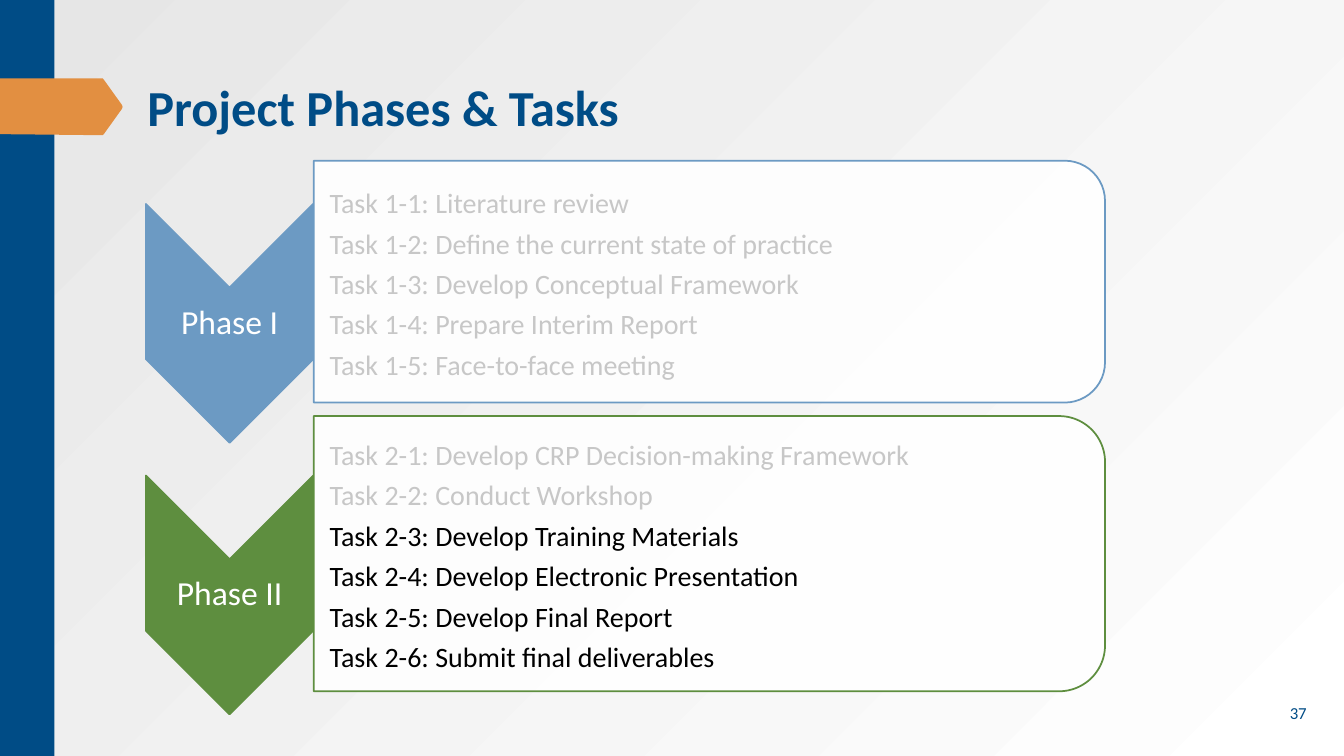
from lxml.etree import SubElement
from pptx import Presentation
from pptx.dml.color import RGBColor
from pptx.enum.shapes import MSO_SHAPE
from pptx.enum.text import MSO_ANCHOR, MSO_AUTO_SIZE, PP_ALIGN
from pptx.oxml.ns import qn
from pptx.util import Pt

NAVY, ORANGE, WHITE, BLACK = "004C86", "E28F41", "FFFFFF", "000000"
BLUE, GREEN, MUTED, SHADE = "6C9AC3", "5E8E3F", "C7C7C7", "E6E6E6"

TAB_OUTLINE = [(0, 56), (73.4, 56), (74.2, 56.9), (87.1, 74.9), (87.6, 76.3),
               (87.1, 77.8), (74.2, 95.8), (73.4, 96.5), (68.4, 96.5), (0, 95.8)]

PHASES = [
    {"name": "Phase I", "color": BLUE, "chevron_y": 231, "card_y": 201.2,
     "card_height": 172.8, "muted": 5, "tasks": [
         "Task 1-1: Literature review",
         "Task 1-2: Define the current state of practice",
         "Task 1-3: Develop Conceptual Framework",
         "Task 1-4: Prepare Interim Report",
         "Task 1-5: Face-to-face meeting"]},
    {"name": "Phase II", "color": GREEN, "chevron_y": 425, "card_y": 395.5,
     "card_height": 196.6, "muted": 2, "tasks": [
         "Task 2-1: Develop CRP Decision-making Framework",
         "Task 2-2: Conduct Workshop",
         "Task 2-3: Develop Training Materials",
         "Task 2-4: Develop Electronic Presentation",
         "Task 2-5: Develop Final Report",
         "Task 2-6: Submit final deliverables"]},
]


def rgb(color):
    """Turn a hex string into a colour."""
    return RGBColor.from_string(color)


class Painter:
    """Draws styled elements on the current slide."""

    font = "Calibri"

    def __init__(self, page):
        """Remember the slide to draw on."""
        self.page = page

    def background(self, center, edge):
        """Fill the slide with a gradient spreading from the bottom right corner."""
        fill = self.page.background.fill
        fill.gradient()
        for stop, color in zip(fill.gradient_stops, (center, edge)):
            stop.color.rgb = rgb(color)
        gradient = next(self.page.element.iter(qn("a:gradFill")))
        gradient.remove(gradient.find(qn("a:lin")))
        path = SubElement(gradient, qn("a:path"), path="circle")
        SubElement(path, qn("a:fillToRect"), l="100000", t="100000")

    def paint(self, shape, fill, line=None):
        """Set the fill and outline of a shape and drop its shadow."""
        shape.shadow.inherit = False
        shape.fill.solid()
        shape.fill.fore_color.rgb = rgb(fill)
        if line:
            shape.line.color.rgb = rgb(line)
            shape.line.width = Pt(1.25)
        else:
            shape.line.fill.background()

    def band(self, left, top, width, height, color):
        """Draw a plain rectangle."""
        shape = self.page.shapes.add_shape(
            MSO_SHAPE.RECTANGLE, Pt(left), Pt(top), Pt(width), Pt(height))
        self.paint(shape, color)

    def outline(self, points, color):
        """Draw a filled polygon."""
        corners = [(Pt(x), Pt(y)) for x, y in points]
        builder = self.page.shapes.build_freeform(*corners[0])
        builder.add_line_segments(corners[1:])
        self.paint(builder.convert_to_shape(), color)

    def turned(self, kind, center_x, center_y, width, height, fill, line, opacity=100):
        """Draw a preset shape turned a quarter, sized as it shows."""
        shape = self.page.shapes.add_shape(
            kind, Pt(center_x - height / 2), Pt(center_y - width / 2),
            Pt(height), Pt(width))
        shape.rotation = 90
        self.paint(shape, fill, line)
        if opacity < 100:
            color = shape.fill._xPr.find(qn("a:solidFill"))[0]
            SubElement(color, qn("a:alpha"), val=str(opacity * 1000))

    def format_para(self, para, size, color, align, bold=False):
        """Style one paragraph and its runs."""
        para.alignment = align
        for span in para.runs:
            span.font.name = self.font
            span.font.size = Pt(size)
            span.font.bold = bold
            span.font.color.rgb = rgb(color)

    def place(self, box, left, top, width, height, anchor, insets):
        """Position a text holder and set up its frame."""
        box.left, box.top, box.width, box.height = map(Pt, (left, top, width, height))
        frame = box.text_frame
        frame.word_wrap = True
        frame.auto_size = MSO_AUTO_SIZE.NONE
        frame.vertical_anchor = anchor
        (frame.margin_left, frame.margin_top,
         frame.margin_right, frame.margin_bottom) = map(Pt, insets)
        return frame

    def title(self, text, left, top, width, height):
        """Fill the title placeholder."""
        frame = self.place(self.page.shapes.title, left, top, width, height,
                           MSO_ANCHOR.TOP, (7.2, 3.6, 7.2, 3.6))
        frame.text = text
        self.format_para(frame.paragraphs[0], 36, NAVY, PP_ALIGN.LEFT, bold=True)

    def label(self, text, left, top, width, height, size, color):
        """Write a centred one-line label."""
        box = self.page.shapes.add_textbox(0, 0, 0, 0)
        frame = self.place(box, left, top, width, height,
                           MSO_ANCHOR.MIDDLE, (1.4, 1.4, 1.4, 1.4))
        frame.text = text
        frame.paragraphs[0].line_spacing = 0.9
        self.format_para(frame.paragraphs[0], size, color, PP_ALIGN.CENTER)

    def task_list(self, box, tasks, muted, left, top, width, height):
        """Fill a body placeholder with tasks, greying the first ones."""
        self.page.shapes.element.append(box.element)
        frame = self.place(box, left, top, width, height,
                           MSO_ANCHOR.MIDDLE, (11.5, 0.7, 0.7, 0.7))
        frame.text = "\n".join(tasks)
        for index, para in enumerate(frame.paragraphs):
            para.line_spacing = 1.1
            para.space_before = Pt(0)
            para.space_after = Pt(2.5)
            self.format_para(para, 20, MUTED if index < muted else BLACK, PP_ALIGN.LEFT)
            properties = para._p.get_or_add_pPr()
            properties.set("marL", "0")
            properties.set("indent", "0")
            SubElement(properties, qn("a:buNone"))

    def phase(self, box, name, color, chevron_y, card_y, card_height, muted, tasks):
        """Draw a phase chevron with its card of tasks."""
        self.turned(MSO_SHAPE.CHEVRON, 164, chevron_y, 119.5, 170.6, color, color)
        self.label(name, 104.3, chevron_y - 25.5, 119.5, 51, 24, WHITE)
        self.turned(MSO_SHAPE.ROUND_2_SAME_RECTANGLE, 506.7, card_y, 565.2,
                    card_height, WHITE, color, opacity=90)
        list_height = card_height - 18
        self.task_list(box, tasks, muted, 223.9, card_y - list_height / 2,
                       556.5, list_height)


def main():
    """Build the slide and save it."""
    deck = Presentation()
    deck.slide_width, deck.slide_height = Pt(960), Pt(540)
    page = deck.slides.add_slide(deck.slide_layouts.get_by_name("Two Content"))
    bodies = list(page.placeholders)[1:]
    painter = Painter(page)
    painter.background(WHITE, SHADE)
    painter.band(0, 0, 38.9, 540, NAVY)
    painter.outline(TAB_OUTLINE, ORANGE)
    painter.title("Project Phases & Tasks", 98, 51, 808.6, 90)
    for box, phase in zip(bodies, PHASES):
        painter.phase(box, **phase)
    painter.label("37", 907.2, 495.4, 40.3, 28.8, 12, NAVY)
    deck.save("out.pptx")


if __name__ == "__main__":
    main()
